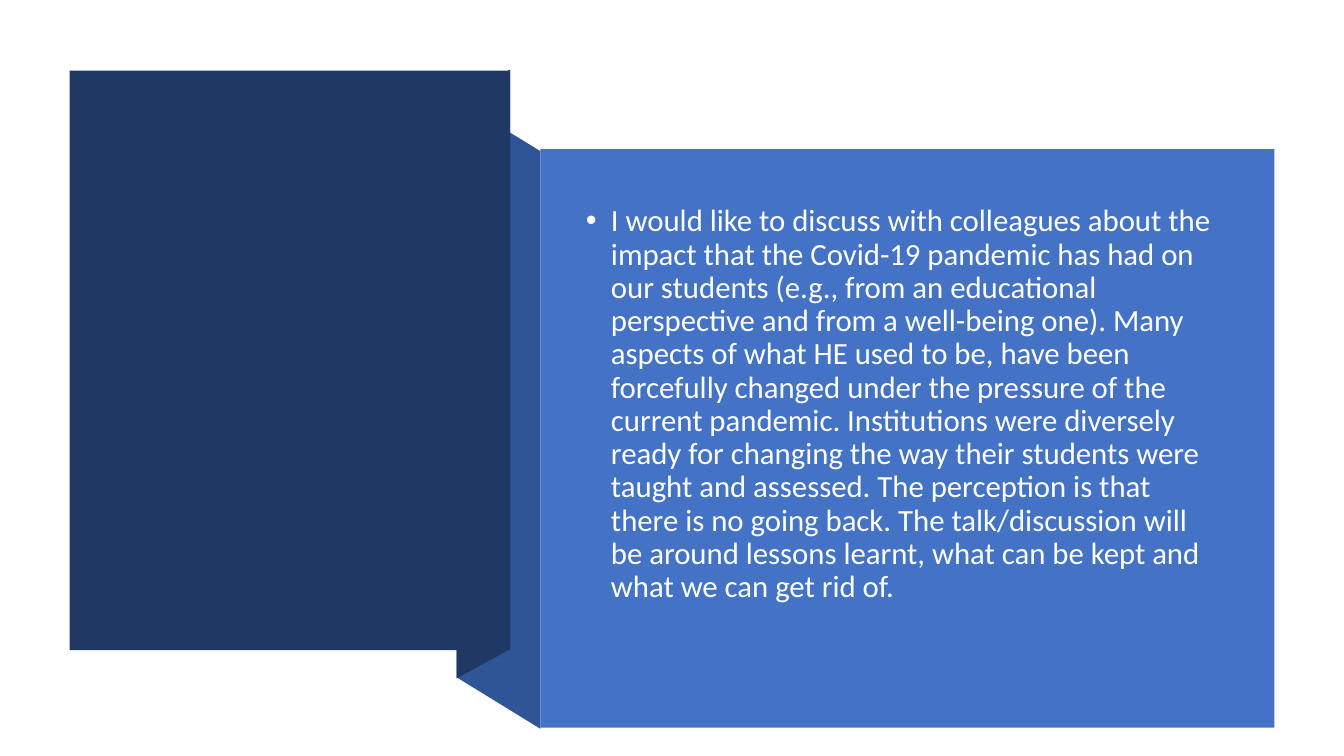
import pptx
import pptx.dml.color
import pptx.enum.shapes
import pptx.enum.text
import pptx.oxml
import pptx.util
from pptx.util import Inches

NAVY = pptx.dml.color.RGBColor(0x20, 0x38, 0x64)
MID_BLUE = pptx.dml.color.RGBColor(0x2F, 0x55, 0x97)
BLUE = pptx.dml.color.RGBColor(0x44, 0x72, 0xC4)
OFF_WHITE = pptx.dml.color.RGBColor(0xFE, 0xFF, 0xFF)

ABSTRACT = (
    "I would like to discuss with colleagues about the impact that the Covid-19 "
    "pandemic has had on our students (e.g., from an educational perspective and "
    "from a well-being one). Many aspects of what HE used to be, have been "
    "forcefully changed under the pressure of the current pandemic. Institutions "
    "were diversely ready for changing the way their students were taught and "
    "assessed. The perception is that there is no going back. The talk/discussion "
    "will be around lessons learnt, what can be kept and what we can get rid of."
)


class Deck:
    """Holds the text style and the current slide."""

    font = "Calibri"
    size = pptx.util.Pt(22)

    def __init__(self):
        self.prs = pptx.Presentation()
        self.prs.slide_width = Inches(13.33)
        self.prs.slide_height = Inches(7.5)

    def add_content_slide(self):
        """Adds a slide with a body placeholder and no title."""
        self.s = self.prs.slides.add_slide(self.prs.slide_layouts[1])
        title = self.s.shapes.title.element
        title.getparent().remove(title)

    def paint(self, sp, color):
        sp.shadow.inherit = False
        sp.fill.solid()
        sp.fill.fore_color.rgb = color
        sp.line.fill.background()

    def rect(self, left, top, width, height, color):
        sp = self.s.shapes.add_shape(
            pptx.enum.shapes.MSO_SHAPE.RECTANGLE,
            Inches(left), Inches(top), Inches(width), Inches(height))
        self.paint(sp, color)

    def fold(self, points, color):
        """Draws a closed polygon through points given in inches."""
        start, *rest = [(Inches(x), Inches(y)) for x, y in points]
        builder = self.s.shapes.build_freeform(*start)
        builder.add_line_segments(rest, close=True)
        self.paint(builder.convert_to_shape(), color)

    def body(self, left, top, width, height, text, color):
        sp = self.s.placeholders[1]
        sp.left, sp.top = Inches(left), Inches(top)
        sp.width, sp.height = Inches(width), Inches(height)
        # Moved last so that it lies in front of the panels.
        self.s.shapes.element.append(sp.element)
        tf = sp.text_frame
        tf.word_wrap = True
        tf.auto_size = pptx.enum.text.MSO_AUTO_SIZE.NONE
        tf.vertical_anchor = pptx.enum.text.MSO_ANCHOR.MIDDLE
        tf.margin_bottom = Inches(0.52)
        tf.text = text
        p = tf.paragraphs[0]
        p.alignment = pptx.enum.text.PP_ALIGN.LEFT
        p.line_spacing = 0.9
        p.space_before = pptx.util.Pt(10)
        p.font.name, p.font.size = self.font, self.size
        p.font.color.rgb = color
        self.bullet(p)

    def bullet(self, p):
        pPr = p._p.get_or_add_pPr()
        pPr.set("marL", str(Inches(0.25)))
        pPr.set("indent", str(-Inches(0.25)))
        ns = 'xmlns:a="http://schemas.openxmlformats.org/drawingml/2006/main"'
        font = pptx.oxml.parse_xml(f'<a:buFont {ns} typeface="Arial"/>')
        char = pptx.oxml.parse_xml(f'<a:buChar {ns} char="•"/>')
        # Both go before the default run properties, as the schema asks.
        for i, child in enumerate(pPr):
            if child.tag.endswith("}defRPr"):
                pPr[i:i] = [font, char]
                return
        pPr.extend([font, char])


def main():
    deck = Deck()
    deck.add_content_slide()
    deck.fold([(5.36, 7.23), (4.53, 6.72), (4.53, 0.99), (5.36, 1.5)], MID_BLUE)
    deck.fold([(5.06, 6.44), (4.53, 6.73), (4.53, 0.98), (5.06, 0.69)], NAVY)
    deck.rect(0.69, 0.7, 4.37, 5.75, NAVY)
    deck.rect(5.36, 1.48, 7.28, 5.74, BLUE)
    deck.body(5.71, 1.88, 6.51, 4.74, ABSTRACT, OFF_WHITE)
    deck.prs.save("out.pptx")


if __name__ == "__main__":
    main()
